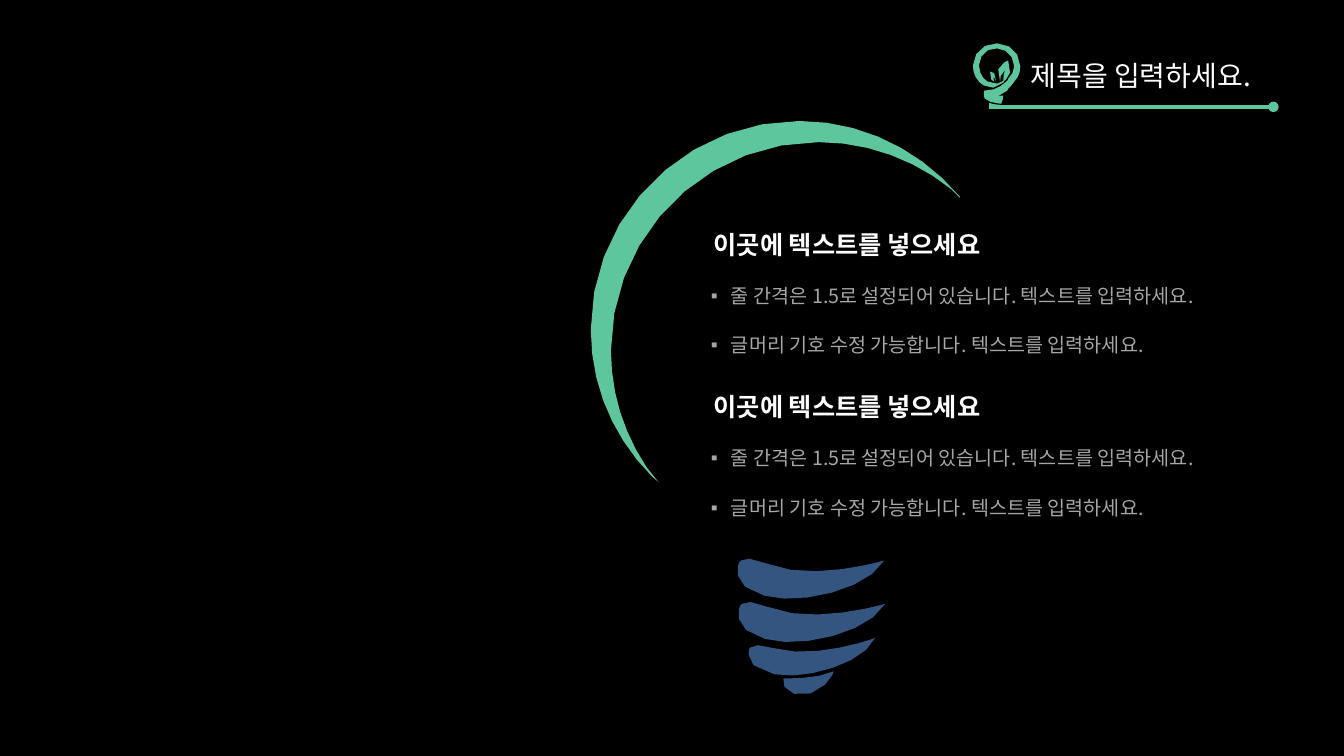
from dataclasses import dataclass
from math import ceil, dist, sqrt

from lxml.etree import SubElement
from pptx import Presentation
from pptx.dml.color import RGBColor as Rgb
from pptx.enum.shapes import MSO_CONNECTOR as Connector, MSO_SHAPE as Preset
from pptx.enum.text import MSO_ANCHOR as Anchor, MSO_AUTO_SIZE as AutoSize, PP_ALIGN as Align
from pptx.oxml.ns import qn
from pptx.util import Emu, Pt

PX = 9144  # EMU per px, 100 px to the inch


@dataclass(frozen=True)
class Theme:
    font: str = "Noto Sans CJK KR"
    background: str = "000000"
    green: str = "5EC69C"
    blue: str = "558ED5"
    white: str = "FFFFFF"
    grey: str = "A6A6A6"
    title_size: int = 20
    heading_size: int = 18
    item_size: int = 14
    rule_width: float = 2.5


THEME = Theme()

TITLE_FORMAT = {"size": Pt(THEME.title_size), "bold": False}
HEADING_FORMAT = {"size": Pt(THEME.heading_size), "bold": True}
ITEM_FORMAT = {"size": Pt(THEME.item_size), "bold": False}

HEADING = "이곳에 텍스트를 넣으세요"
ITEMS = [
    "줄 간격은 1.5로 설정되어 있습니다. 텍스트를 입력하세요.",
    "글머리 기호 수정 가능합니다. 텍스트를 입력하세요.",
]

# Outlines: a start point, then lines (x, y) and cubic curves (six numbers)
SMALL_LEAF = [(986, 81), (986, 81, 980, 79, 982, 71), (982, 71, 991, 72, 988, 81),
              (988, 81, 986, 75, 984, 75), (984, 75, 987, 79, 986, 81)]
LARGE_LEAF = [(995, 81), (995, 81, 1007, 75, 1000, 60), (1000, 60, 983, 66, 992, 81),
              (992, 81, 992, 70, 997, 69), (997, 69, 994, 78, 995, 81)]
ICON_BULB = [(1006, 81), (1010, 77, 1012, 72, 1012, 66), (1012, 53, 1002, 43, 989, 43),
             (976, 42, 965, 53, 965, 65), (965, 71, 967, 77, 971, 81), (972, 82),
             (972, 82, 978, 88, 985, 87), (996, 86, 997, 78, 997, 78),
             (997, 78, 996, 82, 989, 83), (981, 84, 976, 78, 976, 78), (975, 77),
             (973, 74, 971, 70, 971, 65), (971, 55, 979, 47, 989, 48),
             (998, 48, 1006, 56, 1006, 66), (1006, 71, 1003, 75, 1000, 78),
             (1000, 79), (999, 79, 999, 80, 998, 81), (994, 85, 987, 90, 976, 90),
             (976, 90, 975, 95, 977, 98), (977, 98, 987, 100, 999, 90),
             (999, 89, 1000, 89, 1000, 88), (1002, 86, 1005, 83, 1006, 81)]
ICON_SOCKET = [(976, 90), (976, 90, 986, 98, 995, 95), (995, 95, 995, 101, 993, 103),
               (993, 103, 980, 102, 977, 98), (977, 98, 975, 95, 976, 90)]
ICON_TIP = [(981, 102), (981, 102, 989, 105, 992, 104), (992, 104, 991, 108, 986, 107),
            (980, 107, 981, 102, 981, 102)]
CRESCENT = [(793, 120), (857, 120, 914, 150, 952, 195), (952, 196), (944, 188),
            (908, 159, 862, 141, 812, 141), (698, 141, 606, 234, 606, 348),
            (606, 390, 619, 430, 641, 463), (653, 478), (647, 473),
            (609, 435, 586, 384, 586, 327), (586, 213, 679, 120, 793, 120)]
WIDE_BAND = [(733, 558), (733, 558, 722, 582, 758, 591), (793, 601, 861, 585, 877, 556),
             (877, 556, 805, 578, 760, 559), (738, 549, 733, 558, 733, 558)]
NARROW_BAND = [(743, 644), (743, 644, 736, 663, 768, 669), (800, 675, 857, 658, 868, 633),
               (868, 633, 808, 655, 767, 643), (747, 636, 743, 644, 743, 644)]
BULB_TIP = [(777, 673), (777, 673, 811, 674, 827, 666), (827, 666, 823, 681, 804, 688),
            (785, 694, 773, 680, 777, 673)]


def px(length):
    return Emu(round(length * PX))


def trace(outline):
    """Turn an outline into points; longer curves get more of them."""
    points = [outline[0]]
    for segment in outline[1:]:
        if len(segment) == 2:
            points.append(segment)
            continue
        x0, y0 = points[-1]
        x1, y1, x2, y2, x3, y3 = segment
        steps = ceil(sqrt(dist((x0, y0), (x3, y3))) / 2)
        for step in range(1, steps + 1):
            t = step / steps
            a, b, c, d = (1 - t) ** 3, 3 * t * (1 - t) ** 2, 3 * t * t * (1 - t), t ** 3
            points.append((a * x0 + b * x1 + c * x2 + d * x3,
                           a * y0 + b * y1 + c * y2 + d * y3))
    return points


def set_opacity(color_parent, percent):
    SubElement(color_parent[0], qn("a:alpha"), val=str(percent * 1000))


def add_outline(slide, outline, color=None, opacity=100, dx=0, dy=0):
    start, *rest = [(px(x + dx), px(y + dy)) for x, y in trace(outline)]
    builder = slide.shapes.build_freeform(*start, scale=1.0)
    builder.add_line_segments(rest, close=True)
    part = builder.convert_to_shape()
    part.shadow.inherit = False
    part.line.fill.background()
    if color is None:
        part.fill.background()
        return part
    part.fill.solid()
    part.fill.fore_color.rgb = Rgb.from_string(color)
    if opacity < 100:
        set_opacity(part.fill._xPr.find(qn("a:solidFill")), opacity)
    return part


def add_fade(slide):
    fade = slide.shapes.add_shape(Preset.RECTANGLE, px(61), 0, px(1220), px(750))
    fade.shadow.inherit = False
    fade.line.fill.background()
    fade.fill.gradient()
    fade.fill.gradient_angle = 0
    for stop, position, opacity in zip(fade.fill.gradient_stops, (0.47, 0.79), (100, 0)):
        stop.position = position
        stop.color.rgb = Rgb.from_string(THEME.background)
        set_opacity(stop._gs, opacity)
    slide.shapes._spTree.insert(2, fade._element)  # behind the text


def add_rule(slide, left, right, y):
    rule = slide.shapes.add_connector(Connector.STRAIGHT, px(left), px(y), px(right), px(y))
    rule.line.color.rgb = Rgb.from_string(THEME.green)
    rule.line.width = Pt(THEME.rule_width)
    SubElement(rule.line._get_or_add_ln(), qn("a:tailEnd"), type="oval")
    SubElement(rule._element.spPr, qn("a:effectLst"))


def write(paragraph, words, formats, color):
    paragraph.alignment = Align.LEFT
    run = paragraph.add_run()
    run.text = words
    for name, value in formats.items():
        setattr(run.font, name, value)
    run.font.color.rgb = Rgb.from_string(color)
    run.font.name = THEME.font
    run.font._element.set("kern", "0")
    SubElement(run.font._element, qn("a:ea"), typeface=THEME.font)


def place(placeholder, left, top, width, height, wrap=True):
    placeholder.left, placeholder.top = px(left), px(top)
    placeholder.width, placeholder.height = px(width), px(height)
    frame = placeholder.text_frame
    frame.word_wrap = wrap
    frame.auto_size = AutoSize.NONE
    frame.vertical_anchor = Anchor.TOP
    return frame


def add_heading(slide, left, top, width, height):
    right, bottom = left + width, top + height
    corners = [(left, top), (right, top), (right, bottom), (left, bottom)]
    frame = add_outline(slide, corners).text_frame
    frame.word_wrap = True
    frame.vertical_anchor = Anchor.MIDDLE
    write(frame.paragraphs[0], HEADING, HEADING_FORMAT, THEME.white)


def fill_list(placeholder, top):
    frame = place(placeholder, 695, top, 565, 101)
    for index, item in enumerate(ITEMS):
        paragraph = frame.add_paragraph() if index else frame.paragraphs[0]
        properties = paragraph._p.get_or_add_pPr()
        properties.set("marL", str(px(20)))
        properties.set("indent", str(px(-20)))
        SubElement(properties, qn("a:buChar"), char="▪")
        paragraph.line_spacing = 1.5
        paragraph.space_before = Pt(10 if index else 0)
        write(paragraph, item, ITEM_FORMAT, THEME.grey)


def main():
    deck = Presentation()
    deck.slide_width, deck.slide_height = px(1333), px(750)
    slide = deck.slides.add_slide(deck.slide_layouts.get_by_name("Two Content"))
    slide.background.fill.solid()
    slide.background.fill.fore_color.rgb = Rgb.from_string(THEME.background)
    add_fade(slide)

    # Title with its bulb icon and rule
    title = place(slide.shapes.title, 1012, 53, 261, 44, wrap=False)
    write(title.paragraphs[0], "제목을 입력하세요.", TITLE_FORMAT, THEME.white)
    for outline in (SMALL_LEAF, LARGE_LEAF, ICON_BULB, ICON_SOCKET, ICON_TIP):
        add_outline(slide, outline, THEME.green)
    add_rule(slide, 981, 1263, 106)

    # Large bulb
    add_outline(slide, CRESCENT, THEME.green)
    for outline, dx, dy in ((WIDE_BAND, 0, 0), (WIDE_BAND, 1, 43),
                            (NARROW_BAND, 0, 0), (BULB_TIP, 0, 0)):
        add_outline(slide, outline, THEME.blue, 60, dx, dy)

    # Two sections of heading and list
    _, *lists = slide.placeholders
    for index, items in enumerate(lists):
        add_heading(slide, 698, 213 + 160 * index, 315, 60)
        fill_list(items, 265 + 161 * index)

    deck.save("out.pptx")


if __name__ == "__main__":
    main()
